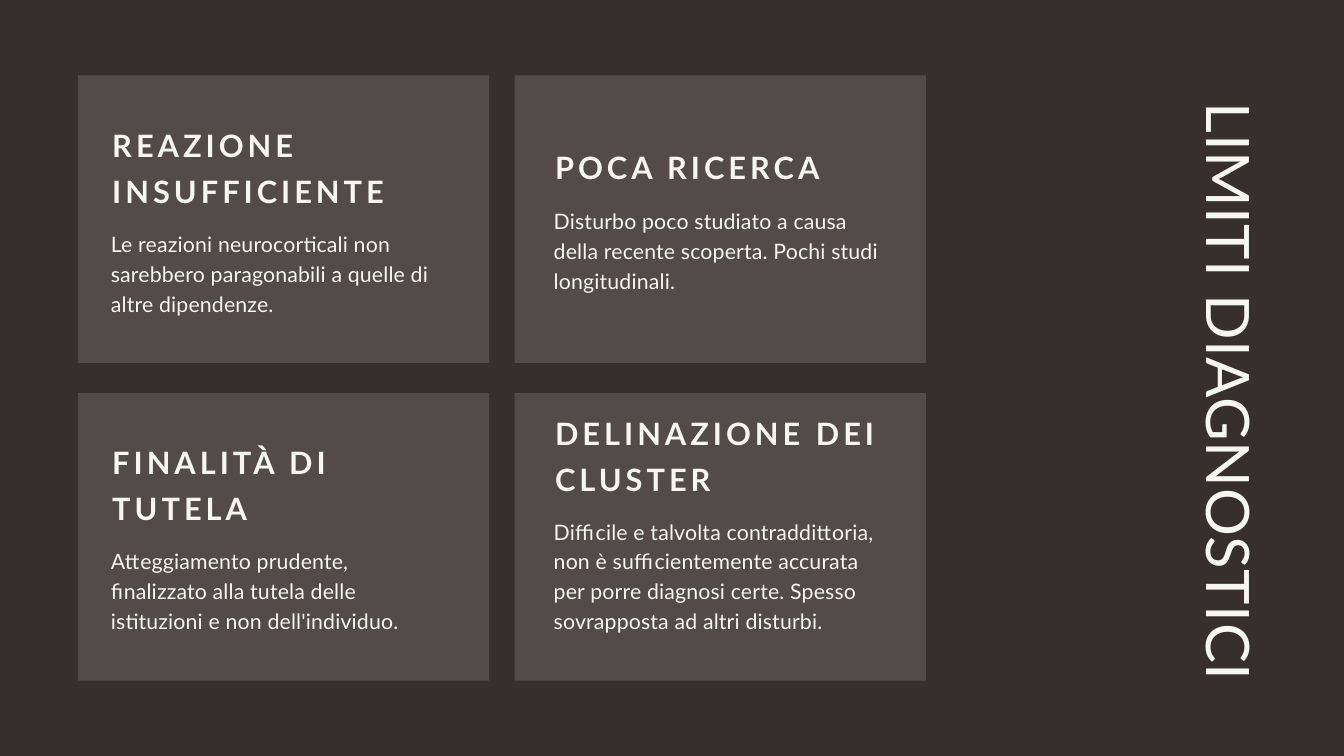
from lxml import etree
from pptx import Presentation
from pptx.dml.color import RGBColor
from pptx.enum.shapes import MSO_SHAPE
from pptx.enum.text import MSO_ANCHOR, MSO_AUTO_SIZE, PP_ALIGN
from pptx.oxml.ns import qn
from pptx.util import Inches, Pt

BACKGROUND = RGBColor(0x37, 0x2E, 0x2E)
IVORY = RGBColor(0xF5, 0xF7, 0xF0)
FONT = "Lato"

CARD_LEFT, CARD_TOP = 1.16, 1.12
CARD_WIDTH, CARD_HEIGHT = 6.12, 4.28
COLUMN_STEP, ROW_STEP = 6.5, 4.73
TEXT_INSETS = (0.51, 0.6)  # heading inset in each column
TEXT_WIDTH = 4.95
HEADING_GAP = 0.33

# row, column, heading, heading top, heading lines, body, body height
CARDS = [
    (1, 0, "FINALITÀ DI TUTELA", 6.47, 2,
     "Atteggiamento prudente, finalizzato alla tutela delle istituzioni "
     "e non dell'individuo.", 1.27),
    (1, 1, "DELINAZIONE DEI CLUSTER", 6.03, 2,
     "Difficile e talvolta contraddittoria, non è sufficientemente accurata "
     "per porre diagnosi certe. Spesso sovrapposta ad altri disturbi.", 2.16),
    (0, 0, "REAZIONE INSUFFICIENTE", 1.75, 2,
     "Le reazioni neurocorticali non sarebbero paragonabili a quelle di "
     "altre dipendenze.", 1.27),
    (0, 1, "POCA RICERCA", 2.08, 1,
     "Disturbo poco studiato a causa della recente scoperta. Pochi studi "
     "longitudinali.", 1.27),
]


def write_text(frame, text, size, leading, tracking, bold=False,
               align=PP_ALIGN.LEFT):
    """Fill a frame with one run; leading and tracking are in points."""
    frame.word_wrap = True
    frame.auto_size = MSO_AUTO_SIZE.NONE
    frame.vertical_anchor = MSO_ANCHOR.TOP
    frame.margin_left = frame.margin_right = 0
    frame.margin_top = frame.margin_bottom = 0
    paragraph = frame.paragraphs[0]
    paragraph.alignment = align
    paragraph.line_spacing = Pt(leading)
    paragraph.space_before = Pt(0)
    run = paragraph.add_run()
    run.text = text
    run.font.name = FONT
    run.font.size = Pt(size)
    run.font.bold = bold
    run.font.color.rgb = IVORY
    run.font._element.set("spc", str(round(tracking * 100)))


def add_title(slide):
    title = slide.shapes.title
    title.left, title.top = Inches(14.03), Inches(5.16)
    title.width, title.height = Inches(8.75), Inches(1.18)
    title.rotation = 90
    write_text(title.text_frame, "LIMITI DIAGNOSTICI", 64.2, 87.4, 0.6,
               align=PP_ALIGN.RIGHT)


def add_panel(slide, left, top):
    panel = slide.shapes.add_shape(
        MSO_SHAPE.RECTANGLE, Inches(left), Inches(top),
        Inches(CARD_WIDTH), Inches(CARD_HEIGHT))
    panel.shadow.inherit = False
    panel.line.fill.background()
    panel.fill.solid()
    panel.fill.fore_color.rgb = IVORY
    color = panel._element.spPr.find(qn("a:solidFill")).find(qn("a:srgbClr"))
    etree.SubElement(color, qn("a:alpha")).set("val", "15000")


def add_card(slide, row, column, heading, heading_top, heading_lines,
             body, body_height):
    left = CARD_LEFT + column * COLUMN_STEP
    add_panel(slide, left, CARD_TOP + row * ROW_STEP)

    text_left = left + TEXT_INSETS[column]
    heading_height = 0.67 * heading_lines - 0.04
    body_top = heading_top + heading_height + HEADING_GAP
    group = slide.shapes.add_group_shape()
    heading_box = group.shapes.add_textbox(
        Inches(text_left), Inches(heading_top),
        Inches(TEXT_WIDTH), Inches(heading_height))
    write_text(heading_box.text_frame, heading, 33, 49.5, 4.3, bold=True)
    body_box = group.shapes.add_textbox(
        Inches(text_left - 0.02), Inches(body_top),
        Inches(TEXT_WIDTH), Inches(body_height))
    write_text(body_box.text_frame, body, 22.8, 31.9, 0.2)


def main():
    deck = Presentation()
    deck.slide_width, deck.slide_height = Inches(20), Inches(11.25)
    slide = deck.slides.add_slide(deck.slide_layouts[5])
    slide.background.fill.solid()
    slide.background.fill.fore_color.rgb = BACKGROUND
    add_title(slide)
    for card in CARDS:
        add_card(slide, *card)
    deck.save("out.pptx")


if __name__ == "__main__":
    main()
